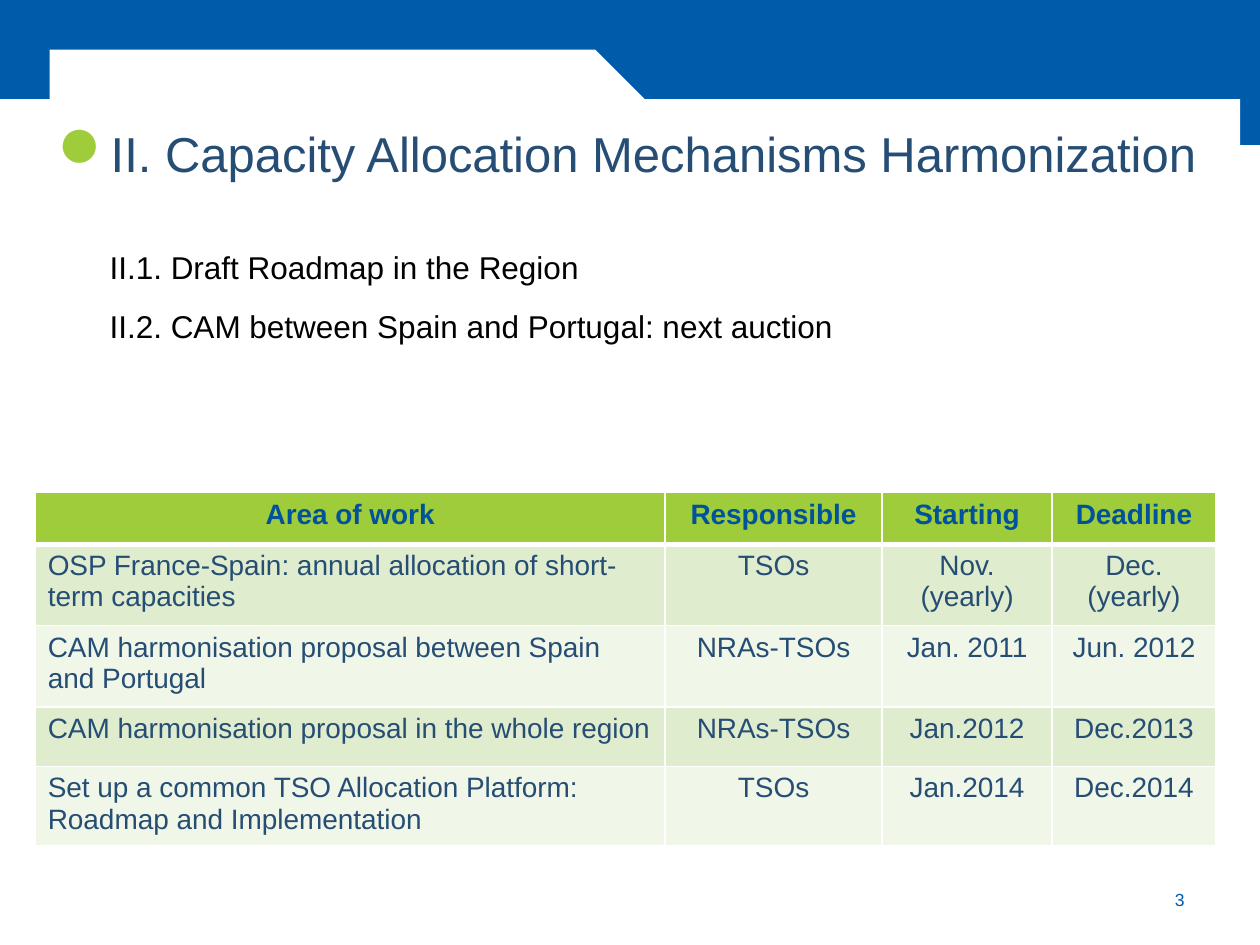
from lxml.etree import SubElement
from pptx import Presentation
from pptx.dml.color import RGBColor
from pptx.enum.shapes import MSO_SHAPE
from pptx.enum.text import MSO_ANCHOR, PP_ALIGN
from pptx.oxml.ns import qn
from pptx.util import Cm, Pt

"""Build the slide on capacity allocation mechanisms with its work table."""

BLUE, GREEN, NAVY, WHITE = "005BAB", "9ECC3B", "264D74", "FFFFFF"


def paint(fill, color):
    fill.solid()
    fill.fore_color.rgb = RGBColor.from_string(color)


def write(frame, text, size=16, color=NAVY, bold=False, align=PP_ALIGN.LEFT,
          wrap=True, anchor=MSO_ANCHOR.TOP, hanging=False):
    frame.word_wrap = wrap
    frame.vertical_anchor = anchor
    for number, line in enumerate(text.split("\n")):
        para = frame.add_paragraph() if number else frame.paragraphs[0]
        para.alignment = align
        if hanging:
            properties = para._p.get_or_add_pPr()
            properties.set("marL", str(Cm(1)))
            properties.set("indent", str(-Cm(0.74)))
            para.line_spacing = 1.2
            para.space_after = Pt(2)
            if number:
                para.space_before = Pt(6)
        span = para.add_run()
        span.text = line
        span.font.name = "Arial"
        span.font.size = Pt(size)
        span.font.bold = bold
        paint(span.font.fill, color)


deck = Presentation()
deck.slide_width, deck.slide_height = Cm(25.4), Cm(19.05)
page = deck.slides.add_slide(deck.slide_layouts[6])
shapes = page.shapes

band = shapes.add_shape(MSO_SHAPE.RECTANGLE, 0, 0, Cm(25.4), Cm(2.92))

curves = [
    [(0, 2.79), (0.08, 2.03), (0.58, 0.53), (3.33, 0.53)],
    [(3.33, 0.53), (7.01, 0.53), (12.95, 2.39), (25.4, 1.55)],
]
steps = 40
wave_points = []
for curve in curves:
    for step in range(1, steps + 1):
        t = step / steps
        weights = [(1 - t) ** 3, 3 * t * (1 - t) ** 2, 3 * t ** 2 * (1 - t), t ** 3]
        wave_points.append(tuple(
            sum(weight * point[axis] for weight, point in zip(weights, curve))
            for axis in (0, 1)))
wave_points += [(25.4, 19.05), (0, 19.05)]
builder = shapes.build_freeform(0, 2.79, scale=Cm(1))
builder.add_line_segments(wave_points, close=True)
wave = builder.convert_to_shape()

for shape, color in ((band, BLUE), (wave, WHITE)):
    paint(shape.fill, color)
    shape.line.fill.background()
    shape.shadow.inherit = False

number_box = shapes.add_textbox(Cm(22.71), Cm(17.63), Cm(1.42), Cm(1.02))
write(number_box.text_frame, "3", size=10, color=BLUE, align=PP_ALIGN.RIGHT,
      anchor=MSO_ANCHOR.MIDDLE)

bullet_box = shapes.add_textbox(Cm(0.89), Cm(1.45), Cm(1.4), Cm(2.39))
write(bullet_box.text_frame, "●", size=44, color=GREEN, align=PP_ALIGN.CENTER,
      wrap=False, anchor=MSO_ANCHOR.BOTTOM)

title_box = shapes.add_textbox(Cm(0.99), Cm(2.13), Cm(24.1), Cm(1.7))
write(title_box.text_frame, "II. Capacity Allocation Mechanisms Harmonization",
      size=28, align=PP_ALIGN.CENTER, hanging=True)

rows = [
    ("Area of work", "Responsible", "Starting", "Deadline"),
    ("OSP France-Spain: annual allocation of short-term capacities",
     "TSOs", "Nov. (yearly)", "Dec. (yearly)"),
    ("CAM harmonisation proposal between Spain and Portugal",
     "NRAs-TSOs", "Jan. 2011", "Jun. 2012"),
    ("CAM harmonisation proposal in the whole region",
     "NRAs-TSOs", "Jan.2012", "Dec.2013"),
    ("Set up a common TSO Allocation Platform: Roadmap and Implementation",
     "TSOs", "Jan.2014", "Dec.2014"),
]
widths = [12.7, 4.37, 3.43, 3.3]
heights = [1.04, 1.64, 1.64, 1.2, 1.6]
table = shapes.add_table(len(rows), len(widths), Cm(0.71), Cm(9.93),
                         Cm(sum(widths)), Cm(sum(heights))).table
table.horz_banding = False
for column, width in zip(table.columns, widths):
    column.width = Cm(width)
for row, height in zip(table.rows, heights):
    row.height = Cm(height)

for r, texts in enumerate(rows):
    header = r == 0
    for c, text in enumerate(texts):
        cell = table.cell(r, c)
        centred = header or c > 0
        write(cell.text_frame, text, color="00529B" if header else NAVY, bold=header,
              align=PP_ALIGN.CENTER if centred else PP_ALIGN.LEFT)
        borders = cell._tc.get_or_add_tcPr()
        for side in ("L", "R", "T", "B"):
            thick = (header and side == "B") or (r == 1 and side == "T")
            edge = SubElement(borders, qn(f"a:ln{side}"), w=str(Pt(3 if thick else 1)))
            SubElement(SubElement(edge, qn("a:solidFill")), qn("a:srgbClr"), val=WHITE)
        paint(cell.fill, GREEN if header else ("F0F6E8", "DFECCE")[r % 2])

list_box = shapes.add_textbox(Cm(1.7), Cm(4.72), Cm(21.59), Cm(2.39))
write(list_box.text_frame,
      "II.1. Draft Roadmap in the Region\n"
      "II.2. CAM between Spain and Portugal: next auction",
      size=18, color="000000", hanging=True)

deck.save("out.pptx")
